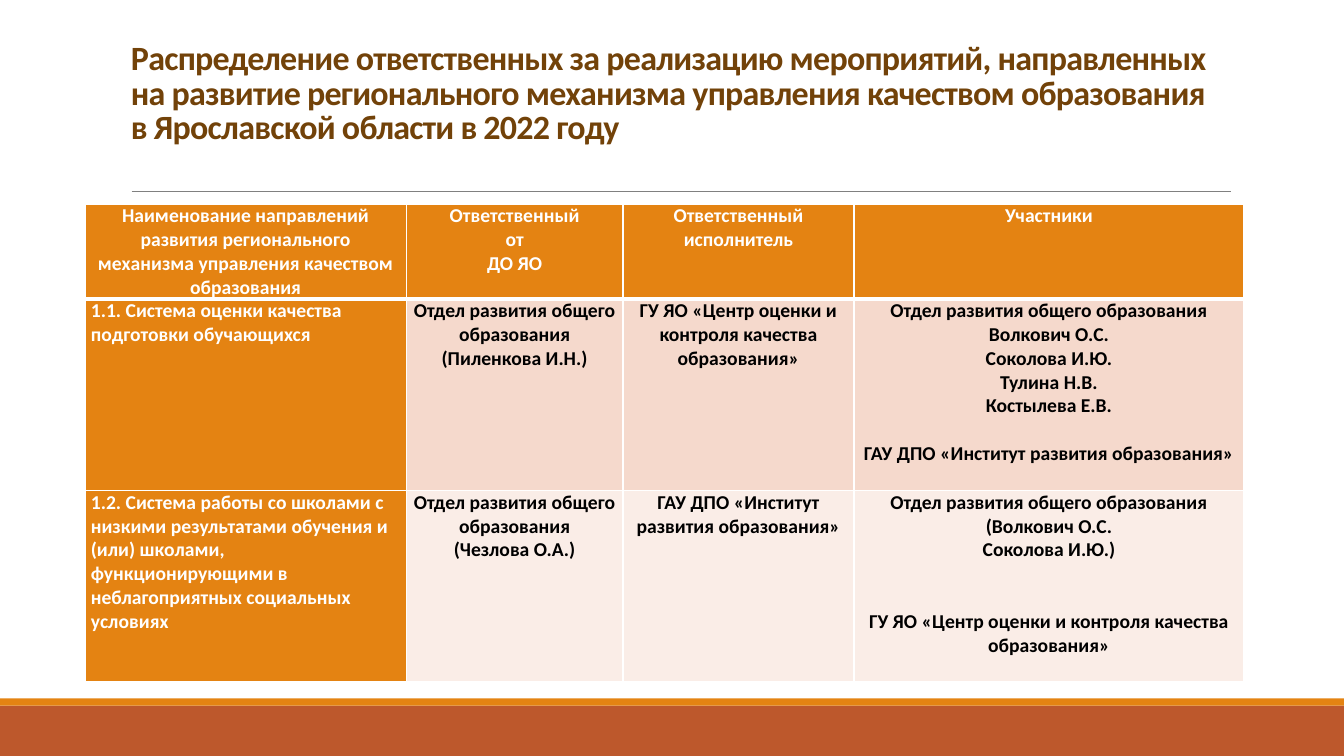
from lxml import etree
from pptx import Presentation
from pptx.dml.color import RGBColor
from pptx.enum.shapes import MSO_CONNECTOR, MSO_SHAPE
from pptx.enum.text import MSO_ANCHOR, PP_ALIGN
from pptx.oxml.ns import qn
from pptx.util import Cm, Pt

LEFT, CENTER = PP_ALIGN.LEFT, PP_ALIGN.CENTER
TOP = MSO_ANCHOR.TOP
RECTANGLE = MSO_SHAPE.RECTANGLE
STRAIGHT = MSO_CONNECTOR.STRAIGHT

COLORS = {
    "orange": "E48312", "rust": "BD582C", "brown": "724209", "gray": "808080",
    "white": "FFFFFF", "black": "000000", "pink": "F5D9CC", "pale": "FAEDE7",
}


def rgb(name):
    return RGBColor.from_string(COLORS[name])


def style_font(font, size, color):
    values = {"name": "Calibri", "size": Pt(size), "bold": True}
    for attribute, value in values.items():
        setattr(font, attribute, value)
    font.color.rgb = rgb(color)


presentation = Presentation()
presentation.slide_width, presentation.slide_height = Cm(33.87), Cm(19.05)
slide = presentation.slides.add_slide(presentation.slide_layouts[6])

# Footer bands
for top, height, color in [(17.78, 1.27, "rust"), (17.6, 0.18, "orange")]:
    band = slide.shapes.add_shape(RECTANGLE, 0, Cm(top), Cm(33.87), Cm(height))
    band.shadow.inherit = False
    band.fill.solid()
    band.fill.fore_color.rgb = rgb(color)
    band.line.fill.background()

# Rule under the title
rule = slide.shapes.add_connector(STRAIGHT, Cm(3.32), Cm(4.82), Cm(31.02), Cm(4.82))
rule.line.color.rgb = rgb("gray")
rule.line.width = Pt(0.5)
etree.SubElement(rule.element.spPr, qn("a:effectLst"))

# Title
title = slide.shapes.add_textbox(Cm(3.05), Cm(0.95), Cm(27.94), Cm(3.8))
title.text_frame.word_wrap = True
title.text_frame.vertical_anchor = TOP
paragraph = title.text_frame.paragraphs[0]
paragraph.line_spacing = 0.85
run = paragraph.add_run()
run.text = (
    "Распределение ответственных за реализацию мероприятий, направленных "
    "на развитие регионального механизма управления качеством образования "
    "в Ярославской области в 2022 году"
)
style_font(run.font, 24.3, "brown")
run.font._element.set("spc", "-50")

# Table content: each cell is a list of paragraphs
DEPARTMENT = "Отдел развития общего образования"
INSTITUTE = "ГАУ ДПО «Институт развития образования»"
CENTRE = "ГУ ЯО «Центр оценки и контроля качества образования»"
rows = [
    [
        ["Наименование направлений развития регионального механизма "
         "управления качеством образования"],
        ["Ответственный", "от", "ДО ЯО"],
        ["Ответственный", "исполнитель"],
        ["Участники"],
    ],
    [
        ["1.1. Система оценки качества подготовки обучающихся"],
        [DEPARTMENT + " (Пиленкова И.Н.)"],
        [CENTRE],
        [DEPARTMENT, "Волкович О.С.", "Соколова И.Ю.", "Тулина Н.В.",
         "Костылева Е.В.", INSTITUTE],
    ],
    [
        ["1.2. Система работы со школами с низкими результатами обучения и "
         "(или) школами, функционирующими в неблагоприятных социальных условиях"],
        [DEPARTMENT, "(Чезлова О.А.)"],
        [INSTITUTE],
        [DEPARTMENT, "(Волкович О.С.", "Соколова И.Ю.)", CENTRE],
    ],
]
column_widths = [8.1, 5.46, 5.82, 9.83]
row_heights = [2.39, 4.83, 4.81]
row_fills = ["orange", "pink", "pale"]
organisation_gaps = [0, 17, 34]  # points above the last participant
margins = {"margin_left": Cm(0.15), "margin_right": Cm(0.15),
           "margin_top": 0, "margin_bottom": 0}

table = slide.shapes.add_table(
    len(rows), len(column_widths), Cm(2.14), Cm(5.14),
    Cm(sum(column_widths)), Cm(sum(row_heights)),
).table
for column, width in zip(table.columns, column_widths):
    column.width = Cm(width)
for row, height in zip(table.rows, row_heights):
    row.height = Cm(height)

for row_index, row_texts in enumerate(rows):
    for column_index, lines in enumerate(row_texts):
        cell = table.cell(row_index, column_index)
        cell.vertical_anchor = TOP
        for attribute, value in margins.items():
            setattr(cell, attribute, value)

        # White borders, thicker under the header
        properties = cell._tc.get_or_add_tcPr()
        for side in ("lnL", "lnR", "lnT", "lnB"):
            thick = (row_index, side) in [(0, "lnB"), (1, "lnT")]
            border = etree.SubElement(properties, qn("a:" + side),
                                      w=str(Pt(3 if thick else 1)))
            fill = etree.SubElement(border, qn("a:solidFill"))
            etree.SubElement(fill, qn("a:srgbClr"), val=COLORS["white"])

        accent = row_index == 0 or column_index == 0
        cell.fill.solid()
        cell.fill.fore_color.rgb = rgb("orange" if accent else row_fills[row_index])

        # Text
        frame = cell.text_frame
        for line_index, line in enumerate(lines):
            paragraph = frame.add_paragraph() if line_index else frame.paragraphs[0]
            paragraph.alignment = LEFT if row_index and column_index == 0 else CENTER
            run = paragraph.add_run()
            run.text = line
            style_font(run.font, 14, "white" if accent else "black")
        if column_index == 3:
            paragraph.space_before = Pt(organisation_gaps[row_index])

presentation.save("out.pptx")
